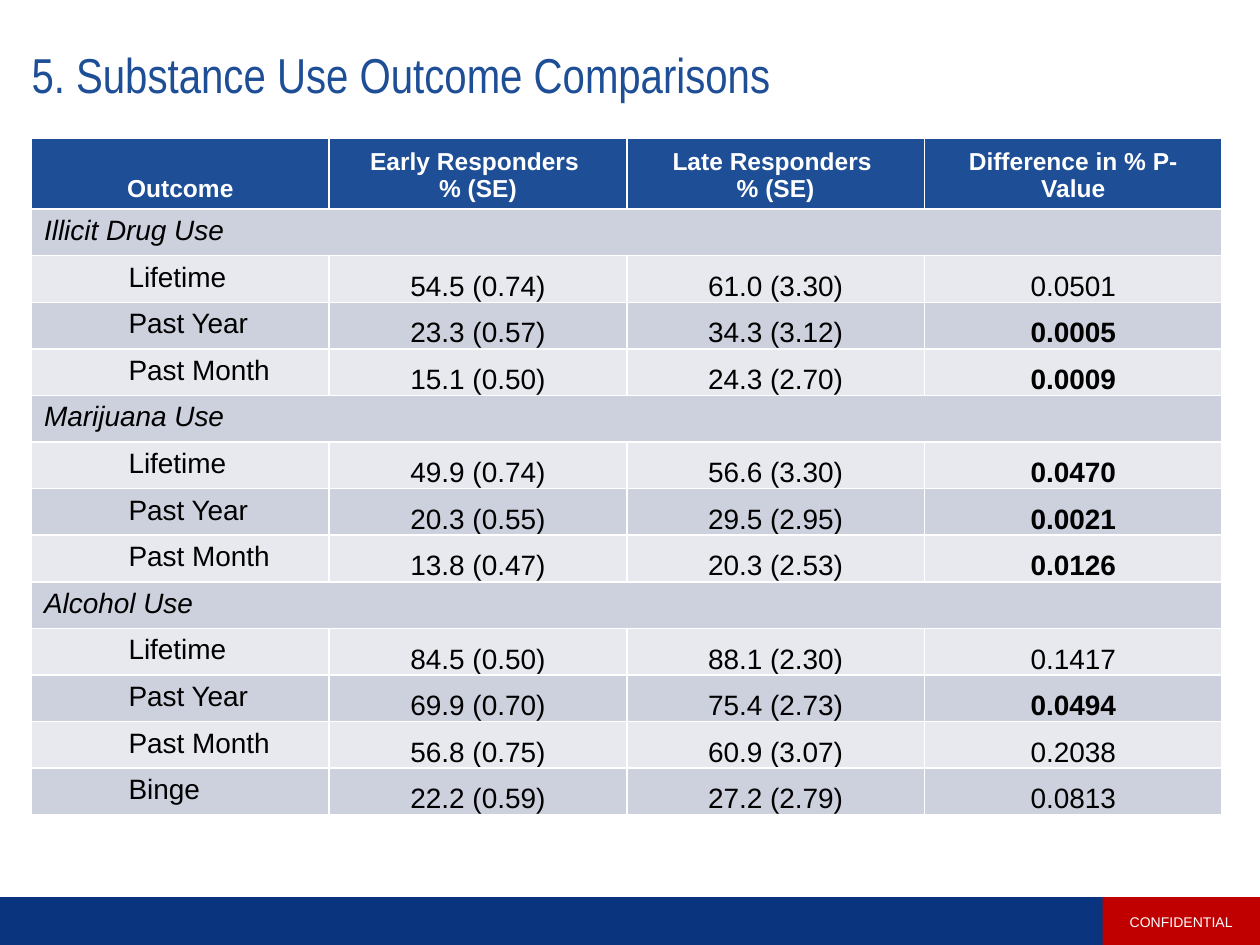
from dataclasses import dataclass

from pptx import Presentation
from pptx.dml.color import RGBColor as RGB
from pptx.enum.shapes import MSO_SHAPE as Shape
from pptx.enum.text import MSO_ANCHOR as Anchor, MSO_AUTO_SIZE as Fit, PP_ALIGN as Align
from pptx.util import Inches, Pt


@dataclass(frozen=True)
class Theme:
    blue: str = "1E4E96"
    navy: str = "0A357E"
    red: str = "C00000"
    white: str = "FFFFFF"
    black: str = "000000"
    bands: tuple = ("E8E9EF", "CDD0DD")
    font: str = "Arial"
    narrow: str = "Arial Narrow"
    title: int = 28
    head: int = 14
    body: int = 16
    note: int = 8


THEME = Theme()
LIMIT = 0.05  # p-values below this are bold

HEADS = [
    ["Outcome"],
    ["Early Responders ", "% (SE)"],
    ["Late Responders ", "% (SE)"],
    ["Difference in % P-Value"],
]
GROUPS = {
    "Illicit Drug Use": [
        ("Lifetime", "54.5 (0.74)", "61.0 (3.30)", "0.0501"),
        ("Past Year", "23.3 (0.57)", "34.3 (3.12)", "0.0005"),
        ("Past Month", "15.1 (0.50)", "24.3 (2.70)", "0.0009"),
    ],
    "Marijuana Use": [
        ("Lifetime", "49.9 (0.74)", "56.6 (3.30)", "0.0470"),
        ("Past Year", "20.3 (0.55)", "29.5 (2.95)", "0.0021"),
        ("Past Month", "13.8 (0.47)", "20.3 (2.53)", "0.0126"),
    ],
    "Alcohol Use": [
        ("Lifetime", "84.5 (0.50)", "88.1 (2.30)", "0.1417"),
        ("Past Year", "69.9 (0.70)", "75.4 (2.73)", "0.0494"),
        ("Past Month", "56.8 (0.75)", "60.9 (3.07)", "0.2038"),
        ("Binge", "22.2 (0.59)", "27.2 (2.79)", "0.0813"),
    ],
}


def add_run(para, text, size, color, font=THEME.font, bold=False, italic=False):
    run = para.add_run()
    run.text = text
    face = run.font
    face.name, face.size = font, Pt(size)
    face.bold, face.italic = bold, italic
    face.color.rgb = RGB.from_string(color)


def set_pads(item, left, top, right, bottom):
    item.margin_left, item.margin_top = Inches(left), Inches(top)
    item.margin_right, item.margin_bottom = Inches(right), Inches(bottom)


def add_bar(slide, left, top, width, height, color):
    bar = slide.shapes.add_shape(
        Shape.RECTANGLE, Inches(left), Inches(top), Inches(width), Inches(height))
    bar.shadow.inherit = False
    bar.fill.solid()
    bar.fill.fore_color.rgb = RGB.from_string(color)
    bar.line.fill.background()
    return bar


def add_footer(slide, left, top, width, height):
    tag = 1.25
    add_bar(slide, left, top, width, height, THEME.navy)
    box = add_bar(slide, left + width - tag, top, tag, height, THEME.red)
    frame = box.text_frame
    frame.vertical_anchor = Anchor.MIDDLE
    para = frame.paragraphs[0]
    para.alignment = Align.CENTER
    add_run(para, "CONFIDENTIAL", THEME.note, THEME.white)


def add_title(slide, left, top, width, height, text):
    title = slide.shapes.title
    title.left, title.top = Inches(left), Inches(top)
    title.width, title.height = Inches(width), Inches(height)
    frame = title.text_frame
    frame.word_wrap, frame.auto_size = True, Fit.NONE
    frame.vertical_anchor = Anchor.MIDDLE
    set_pads(frame, 0.1, 0.1, 0.2, 0.1)
    para = frame.paragraphs[0]
    para.alignment, para.line_spacing = Align.LEFT, 0.9
    add_run(para, text, THEME.title, THEME.blue, THEME.narrow)


def fill_cell(cell, color):
    cell.fill.solid()
    cell.fill.fore_color.rgb = RGB.from_string(color)


def fill_head(cell, lines):
    fill_cell(cell, THEME.blue)
    cell.vertical_anchor = Anchor.BOTTOM
    frame = cell.text_frame
    for i, line in enumerate(lines):
        para = frame.add_paragraph() if i else frame.paragraphs[0]
        para.alignment = Align.CENTER
        add_run(para, line, THEME.head, THEME.white, bold=True)


def fill_label(cell, text):
    para = cell.text_frame.paragraphs[0]
    para.level = 1
    props = para._p.get_or_add_pPr()
    props.set("marL", str(Inches(0.67)))
    props.set("indent", "0")
    add_run(para, text, THEME.body, THEME.black)


def fill_value(cell, text, bold):
    cell.vertical_anchor = Anchor.BOTTOM
    set_pads(cell, 0.01, 0.01, 0.01, 0)
    para = cell.text_frame.paragraphs[0]
    para.alignment = Align.CENTER
    add_run(para, text, THEME.body, THEME.black, bold=bold)


def add_grid(slide, left, top, width, height):
    head, cols = 0.56, len(HEADS)
    count = 1 + sum(1 + len(rows) for rows in GROUPS.values())
    grid = slide.shapes.add_table(
        count, cols, Inches(left), Inches(top), Inches(width), Inches(height)).table
    for col in grid.columns:
        col.width = Inches(width / cols)
    for i, row in enumerate(grid.rows):
        row.height = Inches((height - head) / (count - 1) if i else head)

    # Header row, then alternating bands
    for col, lines in enumerate(HEADS):
        fill_head(grid.cell(0, col), lines)
        for row in range(1, count):
            fill_cell(grid.cell(row, col), THEME.bands[row % 2])

    # One merged heading for each group, with its outcomes below
    row = 1
    for name, items in GROUPS.items():
        first = grid.cell(row, 0)
        first.merge(grid.cell(row, cols - 1))
        add_run(first.text_frame.paragraphs[0], name,
                THEME.body, THEME.black, italic=True)
        for row, (label, early, late, prob) in enumerate(items, row + 1):
            fill_label(grid.cell(row, 0), label)
            fill_value(grid.cell(row, 1), early, False)
            fill_value(grid.cell(row, 2), late, False)
            fill_value(grid.cell(row, 3), prob, float(prob) < LIMIT)
        row += 1


def main():
    deck = Presentation()
    deck.slide_width, deck.slide_height = Inches(10), Inches(7.5)
    slide = deck.slides.add_slide(deck.slide_layouts[5])
    add_footer(slide, 0, 7.12, 10, 0.39)
    add_title(slide, 0.15, 0.2, 9.67, 0.83, "5. Substance Use Outcome Comparisons")
    add_grid(slide, 0.25, 1.1, 9.45, 5.37)
    deck.save("out.pptx")


if __name__ == "__main__":
    main()
